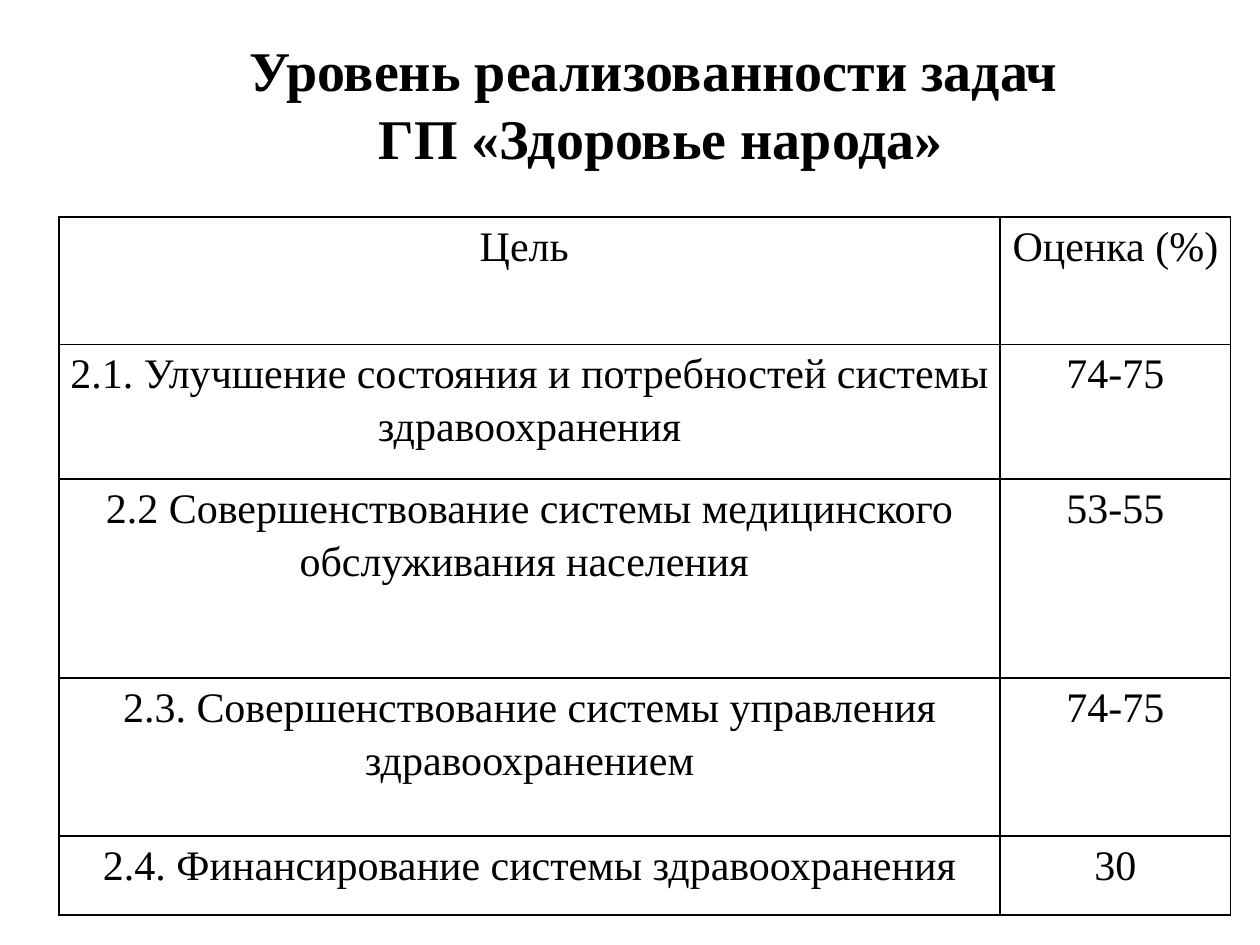
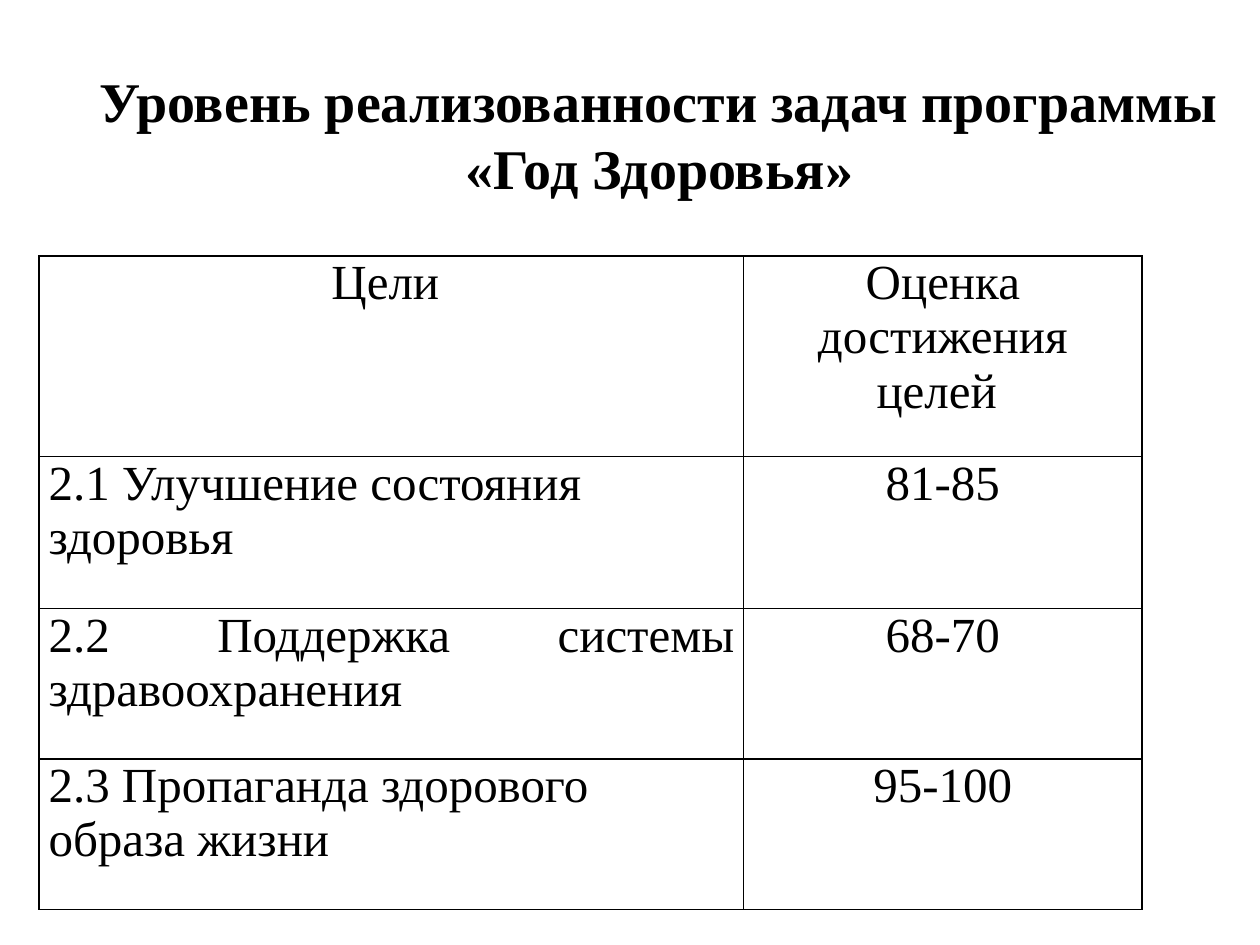
from lxml.etree import SubElement
from pptx import Presentation
from pptx.dml.color import RGBColor
from pptx.enum.text import MSO_ANCHOR, PP_ALIGN
from pptx.oxml.ns import qn
from pptx.util import Cm, Pt

COLORS = {"text": "000000", "border": "000000", "background": "FFFFFF"}
FONT = "Times New Roman"
TITLE_SIZE = 32
BORDER_WIDTH = Pt(1)


def style_paragraph(paragraph, size, align, bold=False, spacing=1.0):
    paragraph.alignment = align
    paragraph.line_spacing = spacing
    paragraph.font.name = FONT
    paragraph.font.size = Pt(size)
    paragraph.font.bold = bold
    paragraph.font.color.rgb = RGBColor.from_string(COLORS["text"])


def add_slide(deck):
    slide = deck.slides.add_slide(deck.slide_layouts[6])
    slide.background.fill.solid()
    slide.background.fill.fore_color.rgb = RGBColor.from_string(COLORS["background"])
    return slide


def add_title(slide, lines, left, top, width, height, first_indent=0):
    frame = slide.shapes.add_textbox(Cm(left), Cm(top), Cm(width), Cm(height)).text_frame
    frame.word_wrap = True
    frame.vertical_anchor = MSO_ANCHOR.MIDDLE
    frame.text = "\n".join(lines)
    for paragraph in frame.paragraphs:
        style_paragraph(paragraph, TITLE_SIZE, PP_ALIGN.CENTER, bold=True)
        if first_indent:
            paragraph._p.get_or_add_pPr().set("indent", str(Cm(first_indent)))


def add_borders(cell):
    properties = cell._tc.get_or_add_tcPr()
    for side in ("lnL", "lnR", "lnT", "lnB"):
        line = SubElement(properties, qn(f"a:{side}"), w=str(BORDER_WIDTH))
        fill = SubElement(line, qn("a:solidFill"))
        SubElement(fill, qn("a:srgbClr"), val=COLORS["border"])


def fill_cell(cell, text, size, align, spacing):
    cell.margin_left = cell.margin_right = Cm(0.19)
    cell.margin_top = cell.margin_bottom = 0
    cell.text = text
    style_paragraph(cell.text_frame.paragraphs[0], size, align, spacing=spacing)
    add_borders(cell)
    cell.fill.background()


def add_goal_table(slide, goals, left, top, widths, heights, size,
                   goal_aligns=None, spacing=1.0):
    table = slide.shapes.add_table(
        len(goals), len(widths), Cm(left), Cm(top), Cm(sum(widths)), Cm(sum(heights))
    ).table
    table.first_row = table.horz_banding = False
    for column, width in zip(table.columns, widths):
        column.width = Cm(width)
    goal_aligns = goal_aligns or [PP_ALIGN.CENTER] * len(goals)
    for row, height, texts, goal_align in zip(table.rows, heights, goals, goal_aligns):
        row.height = Cm(height)
        for cell, text, align in zip(row.cells, texts, (goal_align, PP_ALIGN.CENTER)):
            fill_cell(cell, text, size, align, spacing)


def add_national_program(deck):
    slide = add_slide(deck)
    goals = [
        ("Цель ", "Оценка (%)"),
        ("2.1. Улучшение состояния и потребностей системы здравоохранения", "74-75"),
        ("2.2 Совершенствование системы медицинского обслуживания населения ", "53-55"),
        ("2.3. Совершенствование системы управления здравоохранением", "74-75"),
        ("2.4. Финансирование системы здравоохранения", "30"),
    ]
    add_goal_table(slide, goals, 1.19, 4.37, (18.97, 4.65),
                   (2.57, 2.72, 4.01, 3.18, 1.6), size=24, spacing=1.15)
    add_title(slide, ["Уровень реализованности задач ", "ГП «Здоровье народа»"],
              0, 0.58, 25.4, 3, first_indent=1.25)


def add_health_year(deck):
    slide = add_slide(deck)
    goals = [
        ("Цели ", "Оценка достижения целей "),
        ("2.1 Улучшение состояния здоровья", "81-85"),
        ("2.2 Поддержка системы здравоохранения", "68-70"),
        ("2.3 Пропаганда здорового образа жизни", "95-100"),
    ]
    aligns = (PP_ALIGN.CENTER, PP_ALIGN.LEFT, PP_ALIGN.JUSTIFY, PP_ALIGN.LEFT)
    add_goal_table(slide, goals, 0.79, 5.16, (14.2, 8.03),
                   (4.04, 3.07, 3.03, 3.03), size=28, goal_aligns=aligns)
    add_title(slide, ["Уровень реализованности задач программы «Год Здоровья»"],
              1.19, 0.79, 24.2, 3.81)


def main():
    deck = Presentation()
    deck.slide_width, deck.slide_height = Cm(25.4), Cm(19.05)
    add_national_program(deck)
    add_health_year(deck)
    deck.save("out.pptx")


if __name__ == "__main__":
    main()
